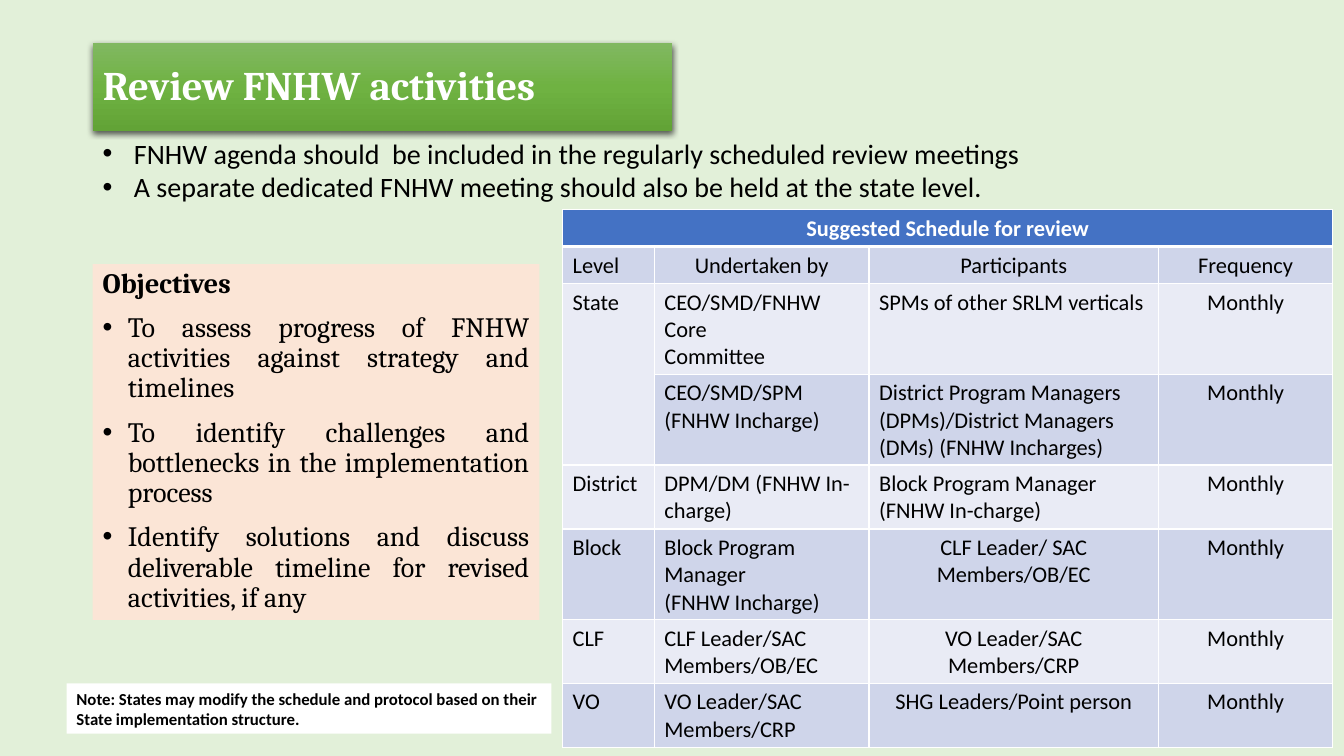
from dataclasses import dataclass

from lxml.etree import SubElement
from pptx import Presentation
from pptx.dml.color import RGBColor
from pptx.enum.shapes import MSO_SHAPE
from pptx.enum.text import MSO_ANCHOR as Anchor, MSO_AUTO_SIZE as AutoSize, PP_ALIGN as Align
from pptx.oxml.ns import qn
from pptx.util import Inches, Pt


@dataclass(frozen=True)
class Theme:
    """Colours, fonts and type sizes of the slide."""
    background: str = "E2F0D9"
    text: str = "000000"
    white: str = "FFFFFF"
    objectives: str = "FBE5D6"
    header: str = "4472C4"
    bands: tuple = ("E9EBF5", "CFD5EA")
    banner: tuple = ((0, "81B861"), (50, "6FB242"), (100, "62A336"))
    heading_font: str = "Cambria"
    body_font: str = "Calibri"
    title_size: int = 29
    body_size: int = 20
    table_size: int = 16
    note_size: int = 12


THEME = Theme()

AGENDA = [
    "FNHW agenda should  be included in the regularly scheduled review meetings",
    "A separate dedicated FNHW meeting should also be held at the state level.",
]
OBJECTIVES = [
    "To assess progress of FNHW activities against strategy and timelines",
    "To identify challenges and bottlenecks in the implementation process",
    "Identify solutions and discuss deliverable timeline for revised activities, if any",
]
NOTE = "Note: States may modify the schedule and protocol based on their State implementation structure."
COLUMN_WIDTHS = [0.91, 2.13, 2.87, 1.73]
ROW_HEIGHTS = [0.36, 0.36, 0.88, 0.88, 0.62, 0.88, 0.62, 0.62]
FIRST_CENTRED_PARTICIPANTS = 5
SCHEDULE = [
    ("Suggested Schedule for review", "", "", ""),
    ("Level", "Undertaken by", "Participants", "Frequency"),
    ("State", "CEO/SMD/FNHW Core\nCommittee", "SPMs of other SRLM verticals", "Monthly"),
    ("", "CEO/SMD/SPM\n(FNHW Incharge)",
     "District Program Managers (DPMs)/District Managers (DMs) (FNHW Incharges)", "Monthly"),
    ("District", "DPM/DM (FNHW In-charge)", "Block Program Manager (FNHW In-charge)", "Monthly"),
    ("Block", "Block Program Manager\n(FNHW Incharge)", "CLF Leader/ SAC Members/OB/EC", "Monthly"),
    ("CLF", "CLF Leader/SAC\nMembers/OB/EC", "VO Leader/SAC Members/CRP", "Monthly"),
    ("VO", "VO Leader/SAC\nMembers/CRP", "SHG Leaders/Point person", "Monthly"),
]


def paint(fill, colour):
    """Give a fill one solid colour."""
    fill.solid()
    fill.fore_color.rgb = RGBColor.from_string(colour)


def style(paragraph, size, font=THEME.body_font, colour=THEME.text, bold=False, align=Align.LEFT):
    """Set the alignment and font of a paragraph."""
    paragraph.alignment = align
    paragraph.font.name = font
    paragraph.font.size = Pt(size)
    paragraph.font.bold = bold
    paragraph.font.color.rgb = RGBColor.from_string(colour)


def add_bullet(paragraph, indent):
    """Hang a round bullet in front of a paragraph."""
    properties = paragraph._p.get_or_add_pPr()
    properties.set("marL", str(Inches(indent)))
    properties.set("indent", str(-Inches(indent)))
    SubElement(properties, qn("a:buFont"), typeface="Arial")
    SubElement(properties, qn("a:buChar"), char="•")


def add_text(slide, lines, left, top, width, height, anchor=Anchor.TOP, fill=None):
    """Add a wrapping text box and return its paragraphs."""
    box = slide.shapes.add_textbox(Inches(left), Inches(top), Inches(width), Inches(height))
    if fill:
        paint(box.fill, fill)
    frame = box.text_frame
    frame.text = "\n".join(lines)
    frame.word_wrap = True
    frame.vertical_anchor = anchor
    return frame.paragraphs


def add_objectives(slide):
    """Add the tinted panel of objectives."""
    lines = ["Objectives", *OBJECTIVES]
    paragraphs = add_text(slide, lines, 0.92, 2.62, 4.43, 3.53, fill=THEME.objectives)
    for index, paragraph in enumerate(paragraphs):
        paragraph.line_spacing = 0.9
        if index:
            paragraph.space_before = Pt(10)
            add_bullet(paragraph, 0.25)
        style(paragraph, THEME.body_size, THEME.heading_font, bold=index == 0, align=Align.JUSTIFY)


def add_agenda(slide):
    """Add the two bullets under the title."""
    for paragraph in add_text(slide, AGENDA, 0.92, 1.3, 9.33, 0.77, Anchor.MIDDLE):
        add_bullet(paragraph, 0.31)
        style(paragraph, THEME.body_size, align=Align.JUSTIFY)


def add_borders(cell, top, bottom):
    """Draw white borders round a cell, with widths in points."""
    properties = cell._tc.get_or_add_tcPr()
    for side, width in (("L", 1), ("R", 1), ("T", top), ("B", bottom)):
        line = SubElement(properties, qn(f"a:ln{side}"), w=str(Pt(width)))
        SubElement(SubElement(line, qn("a:solidFill")), qn("a:srgbClr"), val=THEME.white)


def cell_align(row, column):
    """Return the alignment of a schedule cell."""
    centred = (row == 0 or column == 3 or (row == 1 and column > 0)
               or (column == 2 and row >= FIRST_CENTRED_PARTICIPANTS))
    return Align.CENTER if centred else Align.LEFT


def add_schedule(slide):
    """Add the banded review schedule."""
    table = slide.shapes.add_table(
        len(ROW_HEIGHTS), len(COLUMN_WIDTHS), Inches(5.58), Inches(2.08),
        Inches(sum(COLUMN_WIDTHS)), Inches(sum(ROW_HEIGHTS))).table
    for column, width in zip(table.columns, COLUMN_WIDTHS):
        column.width = Inches(width)
    for row, height in zip(table.rows, ROW_HEIGHTS):
        row.height = Inches(height)
    for row, texts in enumerate(SCHEDULE):
        heading = row == 0
        for column, text in enumerate(texts):
            cell = table.cell(row, column)
            cell.text = text
            add_borders(cell, top=3 if row == 1 else 1, bottom=3 if heading else 1)
            paint(cell.fill, THEME.header if heading else THEME.bands[row % 2])
            for paragraph in cell.text_frame.paragraphs:
                style(paragraph, THEME.table_size, colour=THEME.white if heading else THEME.text,
                      bold=heading, align=cell_align(row, column))
    table.cell(0, 0).merge(table.cell(0, 3))
    table.cell(2, 0).merge(table.cell(3, 0))


def add_note(slide):
    """Add the white note at the bottom left."""
    for paragraph in add_text(slide, [NOTE], 0.66, 6.78, 4.81, 0.5, fill=THEME.white):
        style(paragraph, THEME.note_size, bold=True)


def add_banner(slide):
    """Add the green gradient bar with its soft shadow."""
    banner = slide.shapes.add_shape(
        MSO_SHAPE.RECTANGLE, Inches(0.92), Inches(0.43), Inches(5.75), Inches(0.87))
    banner.line.fill.background()
    banner.fill.gradient()
    banner.fill.gradient_angle = 270
    stops = banner.element.spPr.find(f"{qn('a:gradFill')}/{qn('a:gsLst')}")
    for stop in list(stops):
        stops.remove(stop)
    for percent, colour in THEME.banner:
        stop = SubElement(stops, qn("a:gs"), pos=str(percent * 1000))
        SubElement(stop, qn("a:srgbClr"), val=colour)
    banner.shadow.inherit = False
    effects = banner.element.spPr.find(qn("a:effectLst"))
    shadow = SubElement(effects, qn("a:outerShdw"), blurRad=str(Pt(4.5)), dist=str(Pt(1.5)),
                        dir="5400000", algn="ctr", rotWithShape="0")
    shade = SubElement(shadow, qn("a:srgbClr"), val=THEME.text)
    SubElement(shade, qn("a:alpha"), val="63000")


def set_title(slide, text):
    """Fill the title placeholder and bring it in front of the banner."""
    title = slide.shapes.title
    title.left, title.top = Inches(0.92), Inches(0.54)
    title.width, title.height = Inches(5.75), Inches(0.66)
    frame = title.text_frame
    frame.text = text
    frame.auto_size = AutoSize.NONE
    frame.vertical_anchor = Anchor.MIDDLE
    heading = frame.paragraphs[0]
    heading.line_spacing = 0.9
    style(heading, THEME.title_size, THEME.heading_font, THEME.white, bold=True)
    title.element.getparent().append(title.element)


def main():
    """Build the slide and save it."""
    deck = Presentation()
    deck.slide_width, deck.slide_height = Inches(13.33), Inches(7.5)
    slide = deck.slides.add_slide(deck.slide_layouts[5])
    paint(slide.background.fill, THEME.background)
    add_objectives(slide)
    add_agenda(slide)
    add_schedule(slide)
    add_note(slide)
    add_banner(slide)
    set_title(slide, "Review FNHW activities")
    deck.save("out.pptx")


if __name__ == "__main__":
    main()
